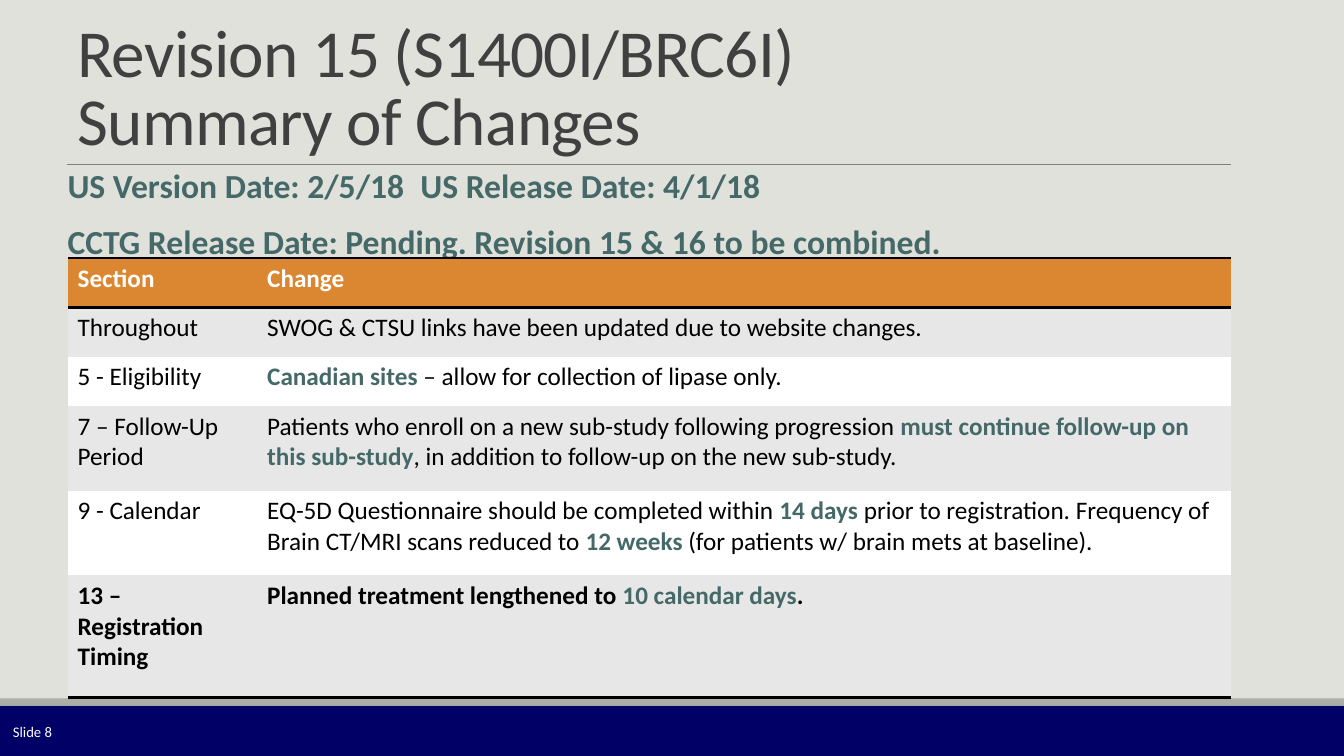
from lxml.etree import SubElement
from pptx import Presentation
from pptx.dml.color import RGBColor
from pptx.enum.shapes import MSO_CONNECTOR as Connector, MSO_SHAPE as Shape
from pptx.enum.text import MSO_ANCHOR as Anchor
from pptx.oxml import parse_xml
from pptx.oxml.ns import nsdecls, qn
from pptx.util import Inches, Pt

COLORS = {
    "background": "E1E1DB", "navy": "000066", "band": "ACADA8", "rule": "808080",
    "title": "404040", "teal": "456968", "footer": "FBFBFB", "orange": "DB8631",
    "stripe": "E7E7E7", "white": "FFFFFF", "black": "000000",
}


def color(name):
    return RGBColor.from_string(COLORS[name])


def add_run(paragraph, text, size, color_name, bold=False):
    run = paragraph.add_run()
    run.text = text
    run.font.name = "Calibri"
    run.font.size = Pt(size)
    run.font.bold = bold
    run.font.color.rgb = color(color_name)
    return run


prs = Presentation()
prs.slide_width, prs.slide_height = Inches(13.33), Inches(7.5)
slide = prs.slides.add_slide(prs.slide_layouts[6])
slide.background.fill.solid()
slide.background.fill.fore_color.rgb = color("background")

for top, height, fill in [(7, 0.5, "navy"), (6.93, 0.07, "band")]:
    footer_bar = slide.shapes.add_shape(
        Shape.RECTANGLE, 0, Inches(top), prs.slide_width, Inches(height))
    footer_bar.shadow.inherit = False
    footer_bar.fill.solid()
    footer_bar.fill.fore_color.rgb = color(fill)
    footer_bar.line.fill.background()

title_rule = slide.shapes.add_connector(
    Connector.STRAIGHT, Inches(0.66), Inches(1.63), Inches(12.21), Inches(1.63))
title_rule.line.color.rgb = color("rule")
title_rule.line.width = Pt(0.5)
SubElement(title_rule._element.spPr, qn("a:effectLst"))

dates = slide.shapes.add_textbox(
    Inches(0.67), Inches(1.63), Inches(11.53), Inches(0.93)).text_frame
dates.word_wrap = True
dates.margin_left = dates.margin_right = 0
us_dates = dates.paragraphs[0]
cctg_date = dates.add_paragraph()
cctg_date.space_before = Pt(12)
for paragraph, text in [
    (us_dates, "US Version Date: 2/5/18\tUS Release Date: 4/1/18"),
    (cctg_date, "CCTG Release Date: Pending. Revision 15 & 16 to be combined."),
]:
    paragraph.line_spacing = 0.9
    paragraph.space_after = Pt(2)
    add_run(paragraph, text, 24, "teal", True)

title = slide.shapes.add_textbox(
    Inches(0.67), Inches(0.04), Inches(11.53), Inches(1.59)).text_frame
title.word_wrap = True
title.vertical_anchor = Anchor.BOTTOM
heading = title.paragraphs[0]
heading.line_spacing = 0.85
revision = add_run(heading, "Revision 15 (S1400I/BRC6I)", 48, "title")
heading.add_line_break()
summary = add_run(heading, "Summary of Changes", 48, "title")
for run in (revision, summary):
    run.font._element.set("spc", "-50")

slide_number = slide.shapes.add_textbox(
    Inches(0.03), Inches(7.06), Inches(1.56), Inches(0.4)).text_frame
slide_number.word_wrap = True
slide_number.vertical_anchor = Anchor.MIDDLE
add_run(slide_number.paragraphs[0], "Slide 8", 10.5, "footer")

changes = [
    ("Section", ["Change"]),
    ("Throughout", ["SWOG & CTSU links have been updated due to website changes."]),
    ("5 - Eligibility", ["", "Canadian sites", " – allow for collection of lipase only."]),
    ("7 – Follow-Up Period", [
        "Patients who enroll on a new sub-study following progression ",
        "must continue follow-up on this sub-study",
        ", in addition to follow-up on the new sub-study."]),
    ("9 - Calendar", [
        "EQ-5D Questionnaire should be completed within ", "14 days ",
        "prior to registration. Frequency of Brain CT/MRI scans reduced to ",
        "12 weeks ", "(for patients w/ brain mets at baseline)."]),
    ("13 – Registration Timing", [
        "Planned treatment lengthened to ", "10 calendar days", "."]),
]
row_heights = [0.49, 0.49, 0.49, 0.84, 0.84, 1.21]
last = len(changes) - 1

table = slide.shapes.add_table(
    len(changes), 2, Inches(0.67), Inches(2.56), Inches(11.54), Inches(4.36)).table
table.columns[0].width = Inches(1.88)
table.columns[1].width = Inches(9.66)

for row, (section, change) in enumerate(changes):
    table.rows[row].height = Inches(row_heights[row])
    fill = "orange" if row == 0 else "stripe" if row % 2 else "white"
    ruled_sides = {0: ["lnT", "lnB"], 1: ["lnT"], last: ["lnB"]}.get(row, [])
    for column, pieces in enumerate([[section], change]):
        cell = table.cell(row, column)
        for side in ["lnL", "lnR", "lnT", "lnB"]:
            if side in ruled_sides:
                width = Pt(2)
                paint = f'<a:solidFill><a:srgbClr val="{COLORS["black"]}"/></a:solidFill>'
            else:
                width, paint = 0, "<a:noFill/>"
            cell._tc.get_or_add_tcPr().append(parse_xml(
                f'<a:{side} {nsdecls("a")} w="{width}">{paint}</a:{side}>'))
        cell.fill.solid()
        cell.fill.fore_color.rgb = color(fill)
        for index, piece in enumerate(pieces):
            highlighted = index % 2 == 1
            ink = "white" if row == 0 else "teal" if highlighted else "black"
            if piece:
                add_run(cell.text_frame.paragraphs[0], piece, 18, ink,
                        highlighted or row in (0, last))

prs.save("out.pptx")
